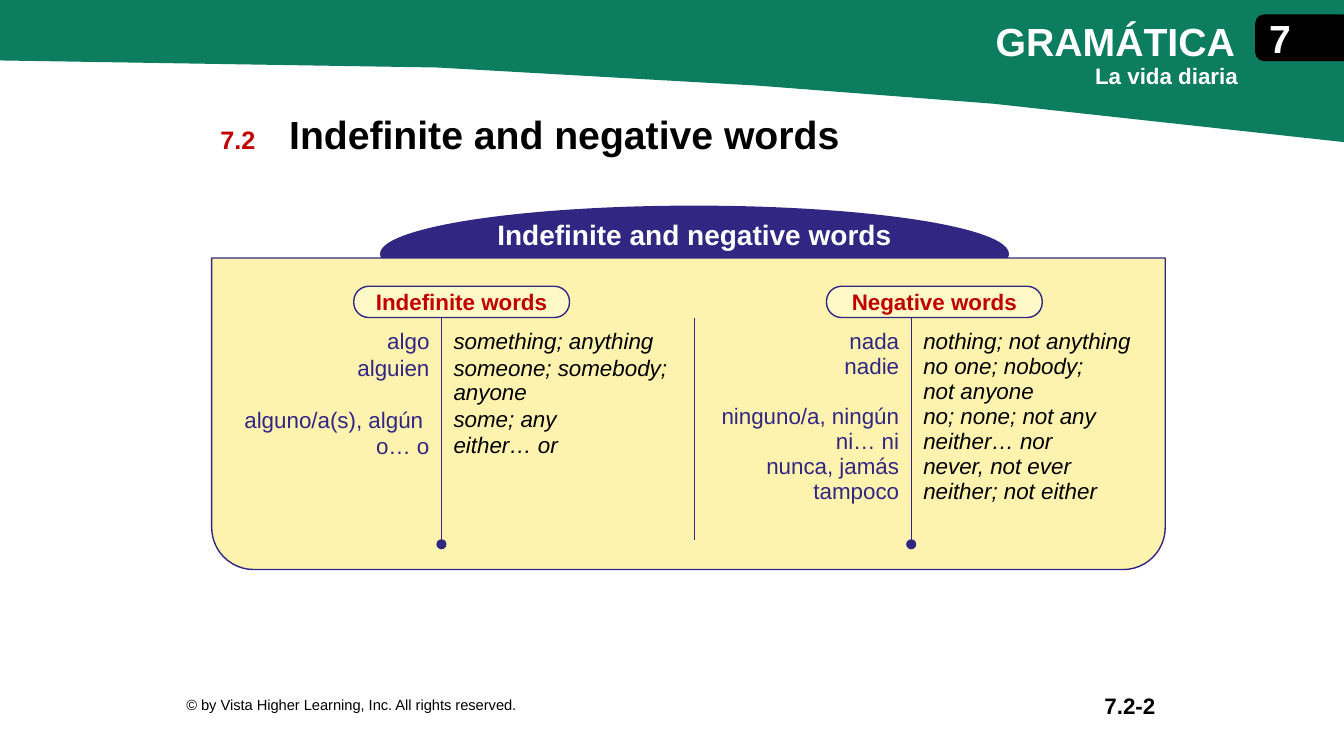
from dataclasses import dataclass

from lxml import etree
from pptx import Presentation
from pptx.dml.color import RGBColor
from pptx.enum.shapes import MSO_SHAPE
from pptx.enum.text import MSO_ANCHOR, PP_ALIGN
from pptx.oxml.ns import qn
from pptx.util import Inches, Pt

LEFT, CENTER, RIGHT = PP_ALIGN.LEFT, PP_ALIGN.CENTER, PP_ALIGN.RIGHT
TOP, MIDDLE = MSO_ANCHOR.TOP, MSO_ANCHOR.MIDDLE
OVAL, PILL = MSO_SHAPE.OVAL, MSO_SHAPE.ROUNDED_RECTANGLE
TWO_ROUNDED = MSO_SHAPE.ROUND_2_SAME_RECTANGLE
NO_STYLE = "{2D5ABB26-0587-4C30-8999-92F81FD0307C}"

GRID_COLUMNS, GRID_ROWS = 160, 90
UNIT = Inches(1) / 12

GREEN, BLACK, WHITE = "0C7D5E", "000000", "FFFFFF"
INDIGO, RED, YELLOW, CREAM = "312783", "C00000", "FDF2AE", "FFF9C7"

TABLE_LEFT, TABLE_TOP, TABLE_HEIGHT = 18, 37.8, 26.52
DOT_SIZE = 1.2
EMPTY_LINE = 17.9


@dataclass(frozen=True)
class Area:
    left: float
    top: float
    width: float
    height: float

    def lengths(self) -> tuple[int, ...]:
        return tuple(grid(v) for v in (self.left, self.top, self.width, self.height))


@dataclass(frozen=True)
class Label:
    text: str
    area: Area
    size: float
    color: str
    align: PP_ALIGN = LEFT
    anchor: MSO_ANCHOR = TOP
    bold: bool = True
    side_inset: float = 0.1


@dataclass(frozen=True)
class WordColumn:
    width: float
    lines: tuple[str, ...]
    spanish: bool
    right_inset: float
    bottom_inset: float = 0.05
    space_after: float = 0
    gap_before: int = -1


@dataclass(frozen=True)
class Heading:
    text: str
    left: float


LABELS = (
    Label("7.2", Area(23.4, 14.16, 9.84, 4.8), 18, RED, CENTER, MIDDLE),
    Label("Indefinite and negative words", Area(33.24, 12.6, 99.36, 6.84), 28, BLACK),
    Label("GRAMÁTICA", Area(117.36, 1.44, 42.6, 6.84), 28, WHITE),
    Label("La vida diaria", Area(121.32, 6.84, 27.24, 4.44), 16, WHITE, RIGHT),
    Label("7", Area(151.08, 2.16, 4.2, 4.8), 28, WHITE, LEFT, MIDDLE, side_inset=0),
    Label("7.2-2", Area(102.6, 81.84, 36.12, 4.2), 16, BLACK, RIGHT, MIDDLE),
    Label("© by Vista Higher Learning, Inc. All rights reserved.",
          Area(21, 81.84, 77.4, 4.2), 10.5, BLACK, LEFT, MIDDLE, False),
)

BAND = ((160, 16.92), (118.32, 12.36), (90.24, 10.2), (52.08, 8.04),
        (0, 7.2), (0, 0), (160, 0))

HEADINGS = (Heading("Indefinite words", 42.12), Heading("Negative words", 98.4))

WORD_COLUMNS = (
    WordColumn(34.56, ("algo", "alguien", "alguno/a(s), algún ", "o… o"),
               True, 0.12, 0.1, 1, gap_before=2),
    WordColumn(30.12, ("something; anything", "someone; somebody; anyone",
                       "some; any", "either… or"), False, 0.1, space_after=1),
    WordColumn(25.8, ("nada", "nadie", "ninguno/a, ningún", "ni… ni",
                      "nunca, jamás", "tampoco"), True, 0.12, gap_before=2),
    WordColumn(29.16, ("nothing; not anything", "no one; nobody;", "not anyone",
                       "no; none; not any", "neither… nor", "never, not ever",
                       "neither; not either"), False, 0.08),
)


def grid(value: float) -> int:
    return round(value * UNIT)


def color(code: str) -> RGBColor:
    return RGBColor.from_string(code)


def add_span(para, text: str, size: float, code: str, bold=False, italic=False) -> None:
    span = para.add_run()
    span.text = text
    span.font.name = "Arial"
    span.font.size = Pt(size)
    span.font.bold = bold
    span.font.italic = italic
    span.font.color.rgb = color(code)


def paint(shape, fill: str, line: str = "") -> None:
    shape.shadow.inherit = False
    shape.fill.solid()
    shape.fill.fore_color.rgb = color(fill)
    if line:
        shape.line.color.rgb = color(line)
        shape.line.width = Pt(1)
    else:
        shape.line.fill.background()


def add_shape(page, kind: MSO_SHAPE, area: Area, fill: str, line: str = "",
              adjustments: tuple[float, ...] = (), rotation: float = 0):
    shape = page.shapes.add_shape(kind, *area.lengths())
    paint(shape, fill, line)
    for index, value in enumerate(adjustments):
        shape.adjustments[index] = value
    shape.rotation = rotation
    return shape


def add_caption(shape, text: str, size: float, code: str, bottom_inset: float) -> None:
    frame = shape.text_frame
    frame.word_wrap = True
    frame.vertical_anchor = MIDDLE
    frame.margin_top, frame.margin_bottom = 0, Inches(bottom_inset)
    para = frame.paragraphs[0]
    para.alignment = CENTER
    add_span(para, text, size, code, bold=True)


def add_label(page, label: Label) -> None:
    frame = page.shapes.add_textbox(*label.area.lengths()).text_frame
    frame.word_wrap = True
    frame.vertical_anchor = label.anchor
    frame.margin_left = frame.margin_right = Inches(label.side_inset)
    para = frame.paragraphs[0]
    para.alignment = label.align
    add_span(para, label.text, label.size, label.color, label.bold)


def add_band(page) -> None:
    start, *rest = [(grid(x), grid(y)) for x, y in BAND]
    builder = page.shapes.build_freeform(*start)
    builder.add_line_segments(rest, close=True)
    paint(builder.convert_to_shape(), GREEN)


def set_border(cell, side: str) -> None:
    border = etree.Element(qn(f"a:{side}"), w=str(Pt(1)))
    fill = etree.SubElement(border, qn("a:solidFill"))
    etree.SubElement(fill, qn("a:srgbClr"), val=INDIGO)
    cell._tc.get_or_add_tcPr().insert(0, border)


def fill_cell(cell, column: WordColumn) -> None:
    cell.fill.background()
    set_border(cell, "lnR" if column.spanish else "lnL")
    cell.margin_left = cell.margin_top = Inches(0.12)
    cell.margin_right = Inches(column.right_inset)
    cell.margin_bottom = Inches(column.bottom_inset)
    frame = cell.text_frame
    for index, text in enumerate(column.lines):
        para = frame.add_paragraph() if index else frame.paragraphs[0]
        para.alignment = RIGHT if column.spanish else LEFT
        para.space_after = Pt(column.space_after)
        if index == column.gap_before:
            para.space_before = Pt(EMPTY_LINE + column.space_after)
        add_span(para, text, 16, INDIGO if column.spanish else BLACK,
                 italic=not column.spanish)


def add_word_table(page) -> None:
    width = sum(column.width for column in WORD_COLUMNS)
    area = Area(TABLE_LEFT, TABLE_TOP, width, TABLE_HEIGHT)
    table = page.shapes.add_table(1, len(WORD_COLUMNS), *area.lengths()).table
    table.first_row = table.horz_banding = False
    table._tbl.tblPr.find(qn("a:tableStyleId")).text = NO_STYLE
    edge = TABLE_LEFT
    for index, column in enumerate(WORD_COLUMNS):
        table.columns[index].width = grid(column.width)
        fill_cell(table.cell(0, index), column)
        edge += column.width
        if column.spanish:
            add_shape(page, OVAL, Area(edge - DOT_SIZE / 2, TABLE_TOP + TABLE_HEIGHT - 0.12,
                                       DOT_SIZE, DOT_SIZE), INDIGO)


def main() -> None:
    deck = Presentation()
    deck.slide_width, deck.slide_height = grid(GRID_COLUMNS), grid(GRID_ROWS)
    page = deck.slides.add_slide(deck.slide_layouts[6])
    add_band(page)
    add_shape(page, TWO_ROUNDED, Area(152.04, -0.72, 5.4, 10.44), BLACK, BLACK, (0.18, 0), 270)
    for label in LABELS:
        add_label(page, label)
    dome = add_shape(page, OVAL, Area(45.24, 24.48, 74.88, 11.52), INDIGO)
    add_caption(dome, "Indefinite and negative words", 20, WHITE, 0.4)
    add_shape(page, TWO_ROUNDED, Area(25.2, 30.72, 113.52, 37.08), YELLOW, INDIGO, (0.135, 0), 180)
    for heading in HEADINGS:
        pill = add_shape(page, PILL, Area(heading.left, 34.08, 25.68, 3.72), CREAM, INDIGO, (0.48,))
        add_caption(pill, heading.text, 16, RED, 0)
    add_word_table(page)
    deck.save("out.pptx")


if __name__ == "__main__":
    main()
